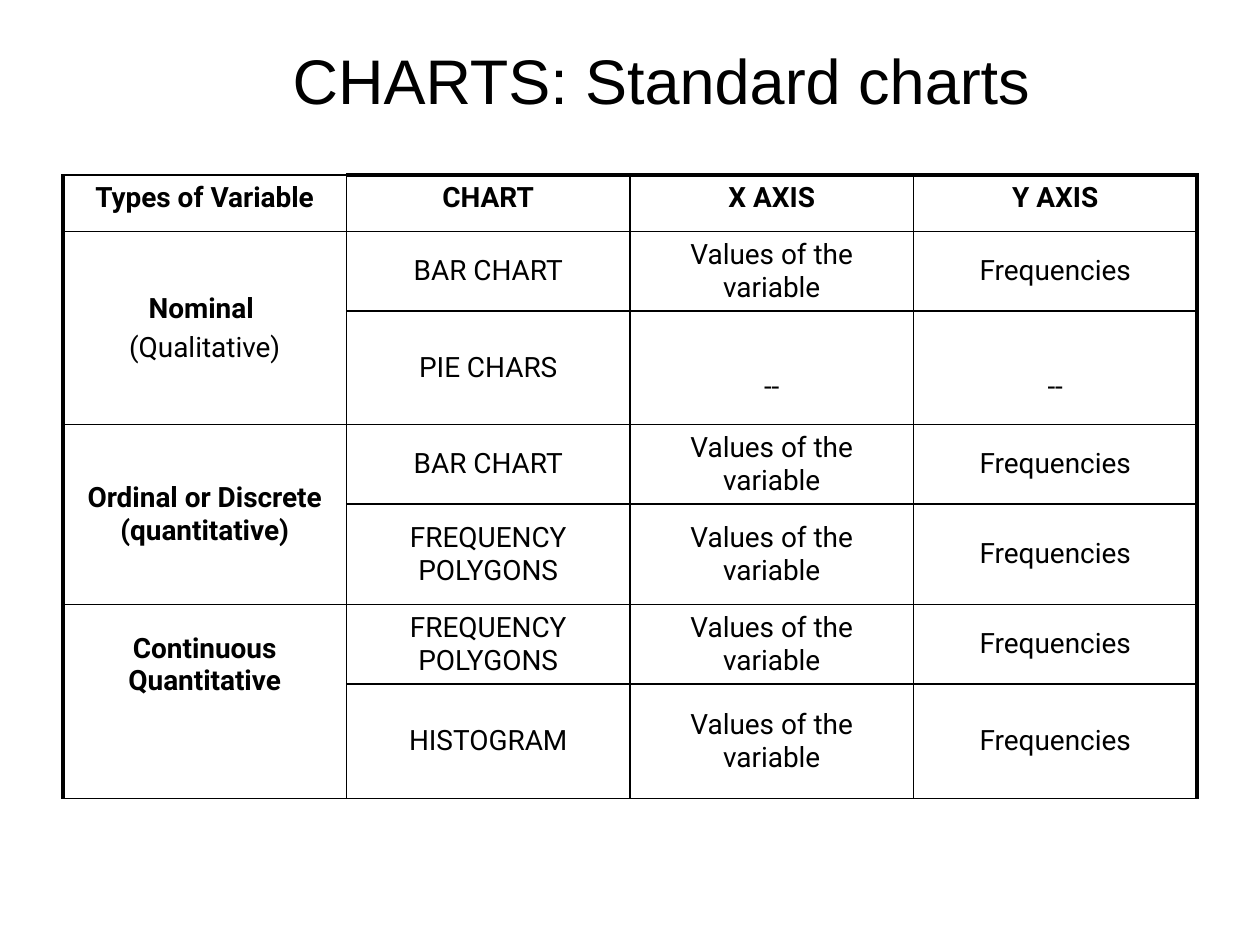
from lxml.etree import SubElement
from pptx import Presentation
from pptx.dml.color import RGBColor
from pptx.enum.text import MSO_ANCHOR as Anchor, PP_ALIGN as Align
from pptx.oxml.ns import qn
from pptx.util import Cm, Pt

COLORS = {"ink": "000000", "background": "FFFFFF"}
THIN, THICK = 1, 2.25
TITLE_FORMAT = {"name": "Arial", "size": Pt(36), "bold": False}
BODY_FORMAT = {"name": "Roboto", "size": Pt(16), "bold": False}
BOLD_FORMAT = {**BODY_FORMAT, "bold": True}

COLUMN_WIDTH = 5.715
ROW_HEIGHTS = [1.14, 1.6, 2.29, 1.6, 2.03, 1.6, 2.31]
HEADERS = ["Types of Variable", "CHART", "X AXIS", "Y AXIS"]
VALUES, COUNTS = "Values of the variable", "Frequencies"
CHART_ROWS = [
    ["BAR CHART", VALUES, COUNTS],
    ["PIE CHARS", "--", "--"],
    ["BAR CHART", VALUES, COUNTS],
    ["FREQUENCY POLYGONS", VALUES, COUNTS],
    ["FREQUENCY POLYGONS", VALUES, COUNTS],
    ["HISTOGRAM", VALUES, COUNTS],
]
# Each variable type covers two chart rows; lines are (text, format).
VARIABLE_TYPES = [
    [("Nominal ", BOLD_FORMAT), ("(Qualitative)", BODY_FORMAT)],
    [("Ordinal or Discrete (quantitative)", BOLD_FORMAT)],
    [("Continuous Quantitative", BOLD_FORMAT)],
]


def write_lines(text_frame, lines):
    """Write centred paragraphs from (text, format) pairs."""
    for index, (text, text_format) in enumerate(lines):
        if index:
            paragraph = text_frame.add_paragraph()
            paragraph.space_before = Pt(3.75)
        else:
            paragraph = text_frame.paragraphs[0]
        paragraph.alignment = Align.CENTER
        run = paragraph.add_run()
        run.text = text
        for name, value in text_format.items():
            setattr(run.font, name, value)
        run.font.color.rgb = RGBColor.from_string(COLORS["ink"])


def set_borders(cell, widths):
    """Draw the sides in the order left, right, top, bottom."""
    properties = cell._tc.get_or_add_tcPr()
    for side, width in zip("LRTB", widths):
        line = SubElement(properties, qn(f"a:ln{side}"), w=str(Pt(width)))
        fill = SubElement(line, qn("a:solidFill"))
        SubElement(fill, qn("a:srgbClr"), val=COLORS["ink"])


def add_title(slide, text):
    title = slide.shapes.title
    title.left, title.top, title.width, title.height = Cm(1.27), Cm(0), Cm(24.13), Cm(3.18)
    title.text_frame.vertical_anchor = Anchor.MIDDLE
    write_lines(title.text_frame, [(text, TITLE_FORMAT)])


def format_grid(table):
    last_column = len(HEADERS) - 1
    for row in range(len(ROW_HEIGHTS)):
        for column in range(len(HEADERS)):
            cell = table.cell(row, column)
            left = THICK if column == 0 else THIN
            right = THICK if column == last_column else THIN
            top = THICK if row == 0 and column > 0 else THIN
            set_borders(cell, [left, right, top, THIN])
            cell.fill.background()
            cell.vertical_anchor = Anchor.MIDDLE if row else Anchor.TOP


def add_chart_guide(slide):
    """Add the table that pairs variable types with their charts."""
    table = slide.shapes.add_table(
        len(ROW_HEIGHTS), len(HEADERS), Cm(1.27), Cm(3.53),
        Cm(COLUMN_WIDTH * len(HEADERS)), Cm(sum(ROW_HEIGHTS)),
    ).table
    table.first_row = table.horz_banding = False
    for column in table.columns:
        column.width = Cm(COLUMN_WIDTH)
    for row, height in zip(table.rows, ROW_HEIGHTS):
        row.height = Cm(height)
    format_grid(table)

    for column, header in enumerate(HEADERS):
        write_lines(table.cell(0, column).text_frame, [(header, BOLD_FORMAT)])
    for row, texts in enumerate(CHART_ROWS, start=1):
        for column, text in enumerate(texts, start=1):
            cell = table.cell(row, column)
            write_lines(cell.text_frame, [(text, BODY_FORMAT)])
            if text == "--":
                cell.margin_top = Cm(0.9)
    for index, lines in enumerate(VARIABLE_TYPES):
        row = 1 + 2 * index
        cell = table.cell(row, 0)
        cell.merge(table.cell(row + 1, 0))
        write_lines(cell.text_frame, lines)
    # The last variable type sits above the middle of its cell.
    cell.margin_bottom = Cm(1.6)


def main():
    presentation = Presentation()
    presentation.slide_width, presentation.slide_height = Cm(25.4), Cm(19.05)
    slide = presentation.slides.add_slide(presentation.slide_layouts[5])
    background = slide.background.fill
    background.solid()
    background.fore_color.rgb = RGBColor.from_string(COLORS["background"])
    add_title(slide, "CHARTS: Standard charts")
    add_chart_guide(slide)
    presentation.save("out.pptx")


if __name__ == "__main__":
    main()
